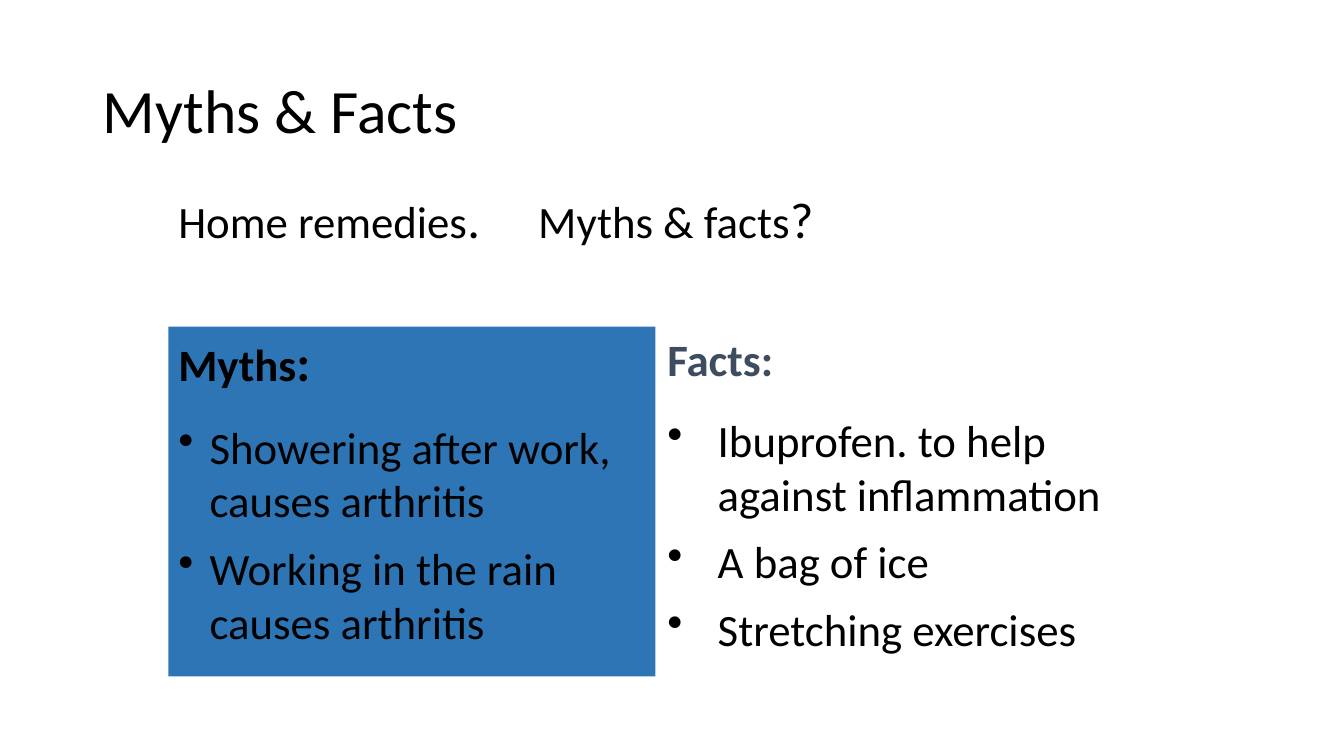
from dataclasses import dataclass

from lxml.etree import SubElement
from pptx import Presentation
from pptx.dml.color import RGBColor
from pptx.enum.shapes import MSO_SHAPE
from pptx.enum.text import MSO_ANCHOR, MSO_AUTO_SIZE, PP_ALIGN
from pptx.oxml.ns import qn
from pptx.slide import Slide
from pptx.text.text import TextFrame, _Paragraph
from pptx.util import Emu, Pt

EMU_PER_PX = 9144  # 100 px to the inch
FONT = "Calibri"
TEXT_SIZE = 32
MARK_SIZE = 36
COLORS = {"text": "000000", "white": "FFFFFF", "blue": "2E75B6", "slate": "3D4C5F"}


@dataclass(frozen=True)
class Span:
    text: str
    size: int = TEXT_SIZE


@dataclass(frozen=True)
class Panel:
    left: int
    width: int
    fill: str
    heading: list[Span]
    heading_color: str
    indent: int
    bullets: list[str]


PANELS = [
    Panel(167, 483, "blue", [Span("Myths"), Span(":", MARK_SIZE)], "text", 31,
          ["Showering after work, causes arthritis",
           "Working in the rain causes arthritis"]),
    Panel(652, 515, "white", [Span("Facts:")], "slate", 50,
          ["Ibuprofen. to help against inflammation",
           "A bag of ice",
           "Stretching exercises"]),
]
PANEL_TOP, PANEL_HEIGHT = 324, 347
HEADING_GAP, BULLET_GAP = 19.5, 9.8


def px(length: int) -> Emu:
    return Emu(length * EMU_PER_PX)


def place(shape, left: int, top: int, width: int, height: int) -> None:
    shape.left, shape.top = px(left), px(top)
    shape.width, shape.height = px(width), px(height)


def prepare_frame(frame: TextFrame, anchor: MSO_ANCHOR) -> _Paragraph:
    """Set wrapping and anchoring, and return the first paragraph."""
    frame.word_wrap = True
    frame.auto_size = MSO_AUTO_SIZE.NONE
    frame.vertical_anchor = anchor
    return frame.paragraphs[0]


def write(para: _Paragraph, spans: list[Span], color: str = "text", bold: bool = False) -> None:
    para.alignment = PP_ALIGN.LEFT
    para.font.name = FONT
    para.font.bold = bold
    para.font.color.rgb = RGBColor.from_string(COLORS[color])
    sizes = {span.size for span in spans}
    if len(sizes) == 1:
        para.font.size = Pt(spans[0].size)
    for span in spans:
        run = para.add_run()
        run.text = span.text
        if len(sizes) > 1:
            run.font.size = Pt(span.size)


def add_bullet(para: _Paragraph, indent: int) -> None:
    properties = para._p.get_or_add_pPr()
    properties.set("marL", str(px(indent)))
    properties.set("indent", str(-px(indent)))
    SubElement(properties, qn("a:buChar"), char="•")


def add_tab_stop(para: _Paragraph, position: int) -> None:
    tabs = SubElement(para._p.get_or_add_pPr(), qn("a:tabLst"))
    SubElement(tabs, qn("a:tab"), pos=str(px(position)), algn="l")


def write_title(slide: Slide) -> None:
    title = slide.shapes.title
    place(title, 92, 40, 1150, 145)
    para = prepare_frame(title.text_frame, MSO_ANCHOR.MIDDLE)
    para.line_spacing = 0.9
    write(para, [Span("Myths & Facts", 44)])


def add_question(slide: Slide) -> None:
    box = slide.shapes.add_textbox(px(167), px(182), px(1000), px(71))
    para = prepare_frame(box.text_frame, MSO_ANCHOR.TOP)
    add_tab_stop(para, 357)
    write(para, [Span("Home remedies"), Span(".\t", MARK_SIZE),
                 Span("Myths & facts"), Span("?", MARK_SIZE)])


def add_panel(slide: Slide, panel: Panel) -> None:
    box = slide.shapes.add_shape(MSO_SHAPE.RECTANGLE, px(panel.left), px(PANEL_TOP),
                                 px(panel.width), px(PANEL_HEIGHT))
    box.shadow.inherit = False
    box.fill.solid()
    box.fill.fore_color.rgb = RGBColor.from_string(COLORS[panel.fill])
    box.line.fill.background()
    heading = prepare_frame(box.text_frame, MSO_ANCHOR.TOP)
    write(heading, panel.heading, panel.heading_color, bold=True)
    for index, bullet in enumerate(panel.bullets):
        para = box.text_frame.add_paragraph()
        add_bullet(para, panel.indent)
        para.space_before = Pt(BULLET_GAP if index else HEADING_GAP)
        write(para, [Span(bullet)])


def main() -> None:
    deck = Presentation()
    deck.slide_width, deck.slide_height = px(1333), px(750)
    slide = deck.slides.add_slide(deck.slide_layouts.get_by_name("Title Only"))
    write_title(slide)
    add_question(slide)
    for panel in PANELS:
        add_panel(slide, panel)
    deck.save("out.pptx")


if __name__ == "__main__":
    main()
